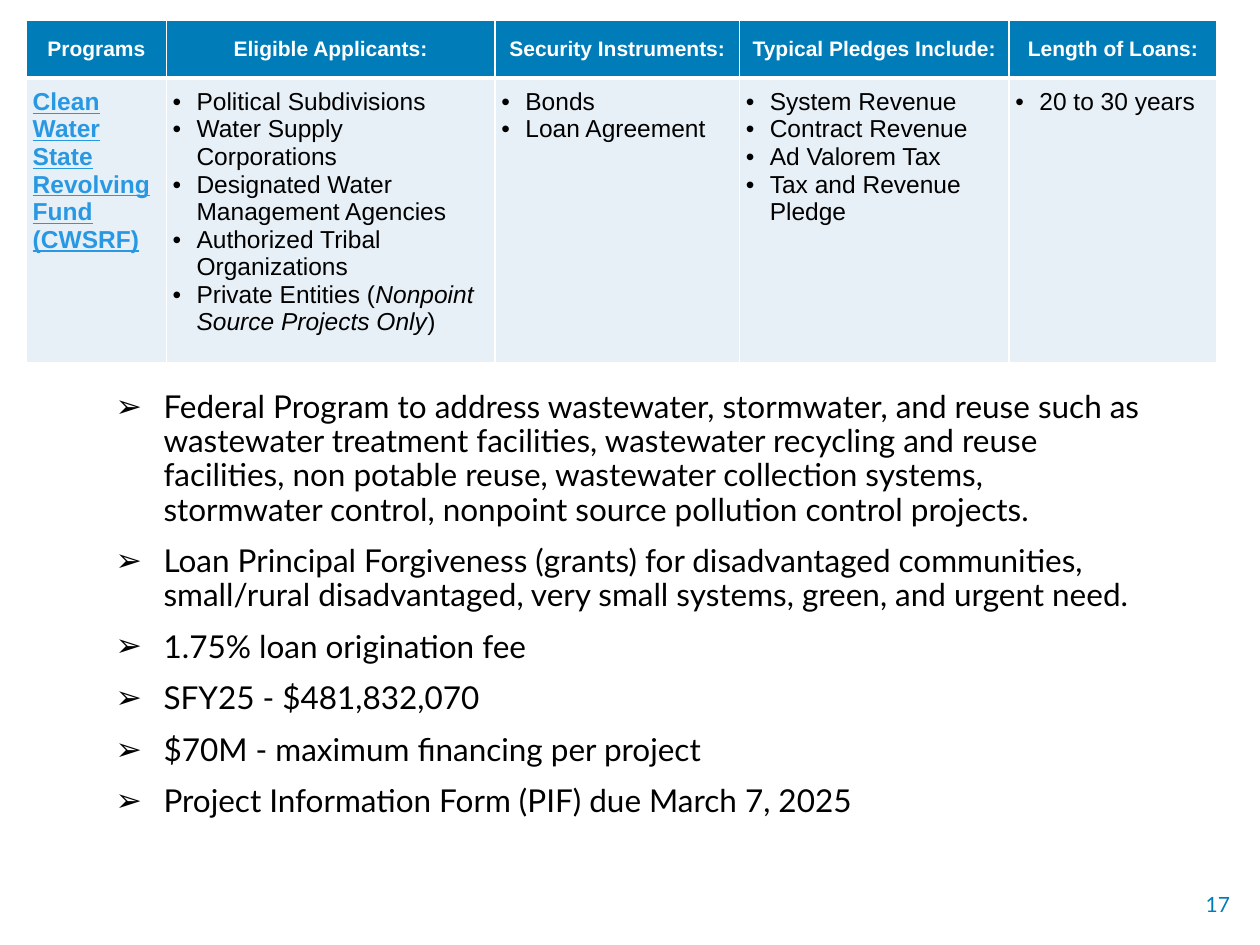
from lxml.etree import SubElement
from pptx import Presentation
from pptx.dml.color import RGBColor
from pptx.enum.text import MSO_ANCHOR, PP_ALIGN
from pptx.oxml.ns import qn
from pptx.util import Inches, Pt

BLUE = RGBColor(0x00, 0x7D, 0xB8)
LINK_BLUE = RGBColor(0x29, 0x98, 0xE3)
PALE = RGBColor(0xE7, 0xF0, 0xF7)
WHITE = RGBColor(0xFF, 0xFF, 0xFF)
BLACK = RGBColor(0x00, 0x00, 0x00)

PROGRAM = "Clean Water State Revolving Fund (CWSRF)"
# Heading, column width in inches, and bulleted entries; a tuple alternates
# upright and italic spans.
COLUMNS = [
    ("Programs", 1.11, []),
    ("Eligible Applicants:", 2.61, [
        "Political Subdivisions",
        "Water Supply Corporations",
        "Designated Water Management Agencies",
        "Authorized Tribal Organizations",
        ("Private Entities (", "Nonpoint Source Projects Only", ")"),
    ]),
    ("Security Instruments:", 1.94, ["Bonds", "Loan Agreement"]),
    ("Typical Pledges Include:", 2.14, [
        "System Revenue", "Contract Revenue", "Ad Valorem Tax",
        "Tax and Revenue Pledge",
    ]),
    ("Length of Loans:", 1.65, ["20 to 30 years"]),
]
DETAILS = [
    "Federal Program to address wastewater, stormwater, and reuse such as "
    "wastewater treatment facilities, wastewater recycling and reuse facilities, "
    "non potable reuse, wastewater collection systems, stormwater control, "
    "nonpoint source pollution control projects.",
    "Loan Principal Forgiveness (grants) for disadvantaged communities, "
    "small/rural disadvantaged, very small systems, green, and urgent need.",
    "1.75% loan origination fee",
    "SFY25 - $481,832,070",
    "$70M - maximum financing per project",
    "Project Information Form (PIF) due March 7, 2025",
]


def set_font(para, name, size, color, bold=False):
    font = para.font
    font.name, font.size, font.bold = name, Pt(size), bold
    font.color.rgb = color


def add_bullet(para, mark, indent):
    properties = para._p.get_or_add_pPr()
    properties.set("marL", str(indent))
    properties.set("indent", str(-indent))
    SubElement(properties, qn("a:buFont"), typeface="Arial")
    SubElement(properties, qn("a:buChar"), char=mark)


def paragraphs(frame, count):
    """Return the frame's first paragraph and as many new ones as needed."""
    return [frame.paragraphs[0]] + [frame.add_paragraph() for _ in range(count - 1)]


def style_cell(cell, fill, top, bottom):
    cell.margin_left = cell.margin_right = Inches(0.05)
    cell.margin_top = cell.margin_bottom = Inches(0.08)
    properties = cell._tc.get_or_add_tcPr()
    for side, width in (("L", 1), ("R", 1), ("T", top), ("B", bottom)):
        line = SubElement(properties, qn(f"a:ln{side}"), w=str(Pt(width)))
        SubElement(SubElement(line, qn("a:solidFill")), qn("a:srgbClr"), val=str(WHITE))
    cell.fill.solid()
    cell.fill.fore_color.rgb = fill


def fill_bullets(cell, entries):
    for para, entry in zip(paragraphs(cell.text_frame, len(entries)), entries):
        add_bullet(para, "•", Inches(0.19))
        set_font(para, "Arial", 14, BLACK)
        spans = (entry,) if isinstance(entry, str) else entry
        for index, text in enumerate(spans):
            span = para.add_run()
            span.text = text
            if index % 2:
                span.font.italic = True


def add_program_table(page, left, top, width, height):
    table = page.shapes.add_table(2, len(COLUMNS), left, top, width, height).table
    header_height = Inches(0.46)
    table.rows[0].height = header_height
    table.rows[1].height = height - header_height
    for index, (heading, column_width, entries) in enumerate(COLUMNS):
        table.columns[index].width = Inches(column_width)
        header, body = table.cell(0, index), table.cell(1, index)
        style_cell(header, BLUE, 1, 3)
        style_cell(body, PALE, 3, 1)
        header.vertical_anchor = MSO_ANCHOR.MIDDLE
        header.text = heading
        para = header.text_frame.paragraphs[0]
        para.alignment = PP_ALIGN.CENTER
        set_font(para, "Arial", 12, WHITE, bold=True)
        if entries:
            fill_bullets(body, entries)
    program = table.cell(1, 0)
    program.text = PROGRAM
    para = program.text_frame.paragraphs[0]
    set_font(para, "Arial", 14, LINK_BLUE, bold=True)
    para.font.underline = True


def add_details(page, left, top, width, height):
    frame = page.shapes.add_textbox(left, top, width, height).text_frame
    frame.word_wrap = True
    for index, (para, text) in enumerate(zip(paragraphs(frame, len(DETAILS)), DETAILS)):
        para.text = text
        para.line_spacing = 0.9
        if index:
            para.space_before = Pt(10)
        add_bullet(para, "➢", Inches(0.38))
        set_font(para, "Lato", 18, BLACK)


def add_page_number(page, left, top, width, height):
    frame = page.shapes.add_textbox(left, top, width, height).text_frame
    frame.word_wrap = True
    frame.vertical_anchor = MSO_ANCHOR.MIDDLE
    para = frame.paragraphs[0]
    para.text = "17"
    para.alignment = PP_ALIGN.RIGHT
    set_font(para, "Lato", 12, BLUE)


def main():
    deck = Presentation()
    deck.slide_width, deck.slide_height = Inches(10), Inches(7.5)
    page = deck.slides.add_slide(deck.slide_layouts.get_by_name("Blank"))
    add_page_number(page, Inches(7.82), Inches(7), Inches(2.04), Inches(0.35))
    add_details(page, Inches(0.82), Inches(3.06), Inches(8.36), Inches(3.94))
    add_program_table(page, Inches(0.21), Inches(0.16), Inches(9.45), Inches(2.72))
    deck.save("out.pptx")


if __name__ == "__main__":
    main()
